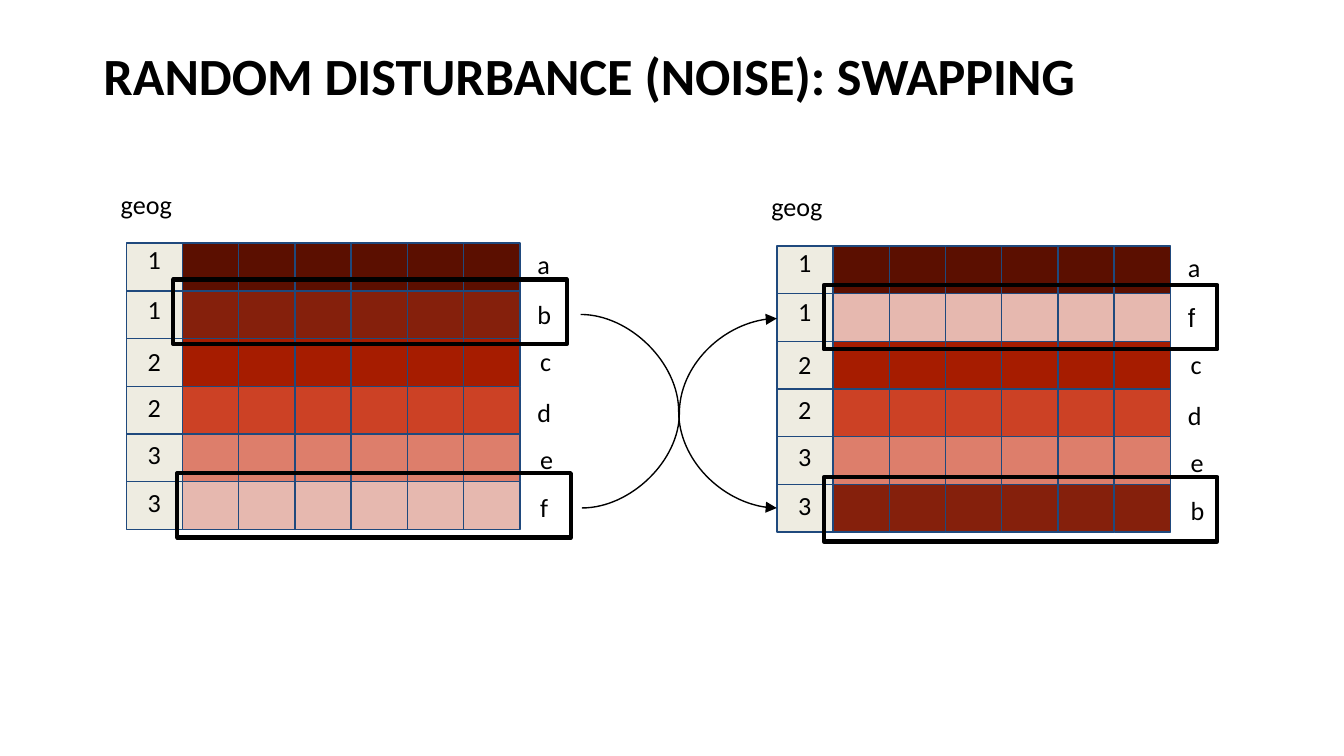
"""Build a slide that explains random disturbance of records by swapping."""
from lxml import etree
from pptx import Presentation, util as u
from pptx.dml.color import RGBColor
from pptx.enum import shapes, text
from pptx.oxml.ns import qn

TITLE = "RANDOM DISTURBANCE (NOISE): SWAPPING"
HEADING = "geog"
REGIONS = ["1", "1", "2", "2", "3", "3"]
RECORD_COLOURS = {
    "a": "5B0F00", "b": "85200C", "c": "A61C00",
    "d": "CC4125", "e": "DD7E6B", "f": "E6B8AF",
}
MIDDLE = {"font": "Arial", "anchor": text.MSO_ANCHOR.MIDDLE}
GRIDS = [
    {"left": 0.94, "top": 1.81, "records": "abcdef", "frames": [(0.35, 0.27), (0.38, 1.71)],
     "formats": {}},
    {"left": 5.78, "top": 1.83, "records": "afcdeb", "frames": [(0.35, 0.29), (0.35, 1.72)],
     "formats": {"f": MIDDLE}},
]
SWAPS = [((4.32, 2.34), (5.78, 3.78)), ((4.33, 3.78), (5.78, 2.37))]

BLACK, BORDER, REGION_FILL = "000000", "1F497D", "EEECE1"
FIELDS = 6
COLUMN, ROW = 2.51 / 6, 2.13 / 6
LABEL_SIZE = (0.42, 0.44)
REGION_TOPS = [-0.1, 0.27, 0.66, 1, 1.35, 1.71]
RECORD_TOPS = [-0.06, 0.31, 0.66, 1.04, 1.39, 1.75]
RECORD_LEFTS = [2.96, 2.96, 2.98, 2.96, 2.98, 2.98]


def colour(value):
    """Turn a hex string into a colour."""
    return RGBColor.from_string(value)


def write(shape, content, size=14, font="Calibri", bold=False, inset=0.1,
          anchor=text.MSO_ANCHOR.TOP, auto_size=text.MSO_AUTO_SIZE.SHAPE_TO_FIT_TEXT):
    """Put formatted, left-aligned text in a shape."""
    frame = shape.text_frame
    frame.text = content
    frame.word_wrap = True
    frame.auto_size = auto_size
    frame.vertical_anchor = anchor
    frame.margin_left = frame.margin_right = u.Inches(0.1)
    frame.margin_top = frame.margin_bottom = u.Inches(inset)
    paragraph = frame.paragraphs[0]
    paragraph.alignment = text.PP_ALIGN.LEFT
    run_font = paragraph.runs[0].font
    run_font.size, run_font.name, run_font.bold = u.Pt(size), font, bold
    run_font.color.rgb = colour(BLACK)


def add_label(slide, content, left, top, width=LABEL_SIZE[0], **options):
    """Add a text box."""
    box = slide.shapes.add_textbox(*map(u.Inches, (left, top, width, LABEL_SIZE[1])))
    write(box, content, **options)


def add_box(slide, left, top, width, height, line, weight, fill=None):
    """Add an outlined rectangle, filled or clear."""
    shape = slide.shapes.add_shape(
        shapes.MSO_SHAPE.RECTANGLE, *map(u.Inches, (left, top, width, height)))
    shape.shadow.inherit = False
    if fill:
        shape.fill.solid()
        shape.fill.fore_color.rgb = colour(fill)
    else:
        shape.fill.background()
    shape.line.color.rgb = colour(line)
    shape.line.width = u.Pt(weight)


def add_grid(slide, left, top, records, formats, **_):
    """Add the cells, regions and record names of one data set."""
    for row, record in enumerate(records):
        fills = [REGION_FILL] + [RECORD_COLOURS[record]] * FIELDS
        for column, fill in enumerate(fills):
            add_box(slide, left + column * COLUMN, top + row * ROW, COLUMN, ROW,
                    BORDER, 0.75, fill)
    add_label(slide, HEADING, left - 0.14, top - 0.51, width=2 * COLUMN)
    for row, (region, record) in enumerate(zip(REGIONS, records)):
        add_label(slide, region, left + 0.06, top + REGION_TOPS[row])
        add_label(slide, record, left + RECORD_LEFTS[row], top + RECORD_TOPS[row],
                  **formats.get(record, {}))


def add_swap(slide, start, end):
    """Add a curved arrow."""
    arrow = slide.shapes.add_connector(
        shapes.MSO_CONNECTOR.CURVE, *map(u.Inches, start + end))
    arrow.line.color.rgb = colour(BLACK)
    arrow.line.width = u.Pt(0.75)
    etree.SubElement(arrow.line._get_or_add_ln(), qn("a:tailEnd"), type="triangle")
    etree.SubElement(arrow._element.spPr, qn("a:effectLst"))


def main():
    """Build and save the slide."""
    presentation = Presentation()
    presentation.slide_width = u.Inches(10)
    presentation.slide_height = presentation.slide_width * 9 // 16
    slide = presentation.slides.add_slide(presentation.slide_layouts[5])

    title = slide.shapes.title
    title.left, title.top, title.width, title.height = map(u.Inches, (0.67, 0.27, 8.38, 1.41))
    write(title, TITLE, size=28, bold=True, inset=0.05, auto_size=text.MSO_AUTO_SIZE.NONE)

    for grid in GRIDS:
        add_grid(slide, **grid)
    for start, end in SWAPS:
        add_swap(slide, start, end)
    for grid in GRIDS:
        for across, down in grid["frames"]:
            add_box(slide, grid["left"] + across, grid["top"] + down, 7 * COLUMN, 0.48,
                    BLACK, 2.25)

    presentation.save("out.pptx")


if __name__ == "__main__":
    main()
